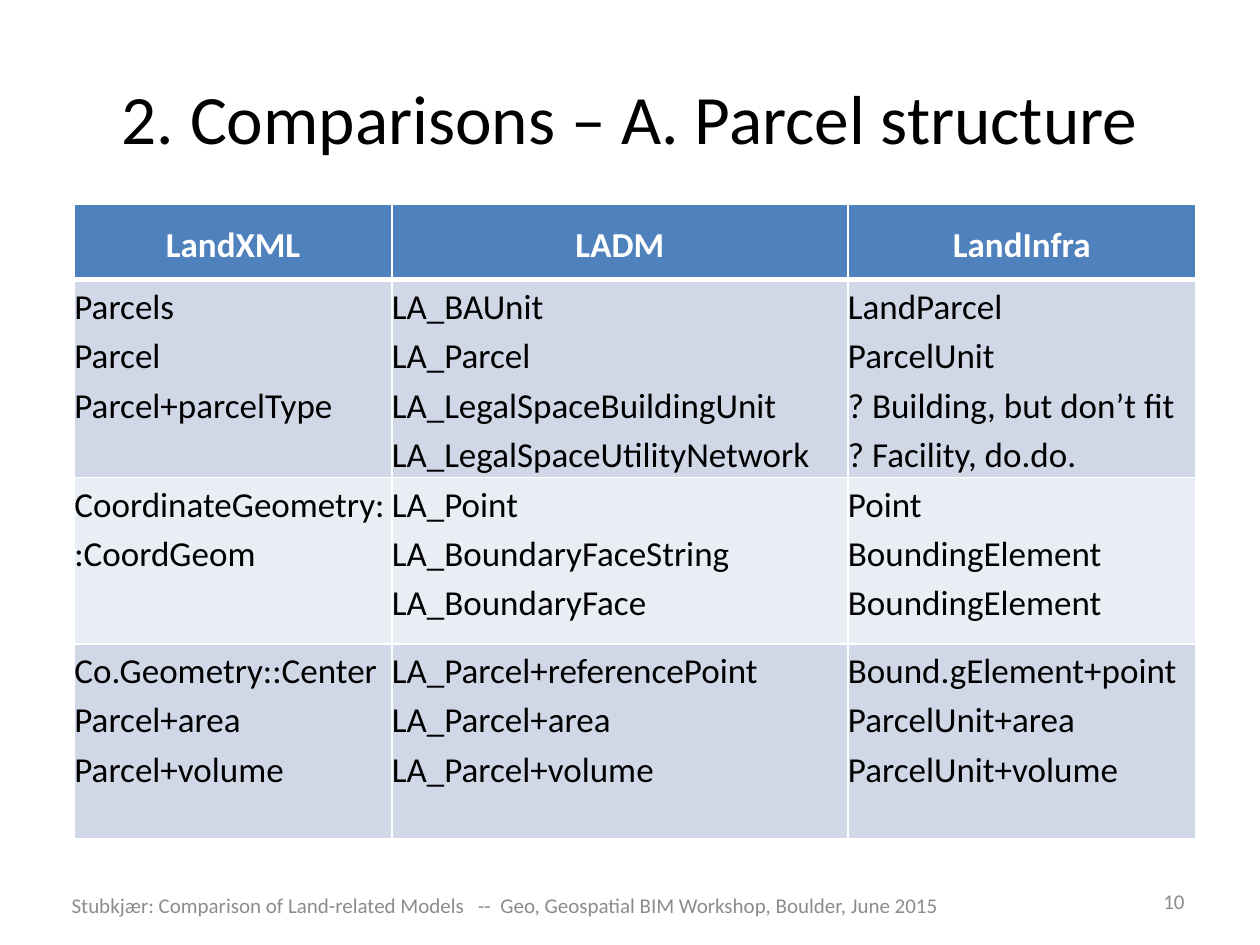
from lxml import etree
from pptx import Presentation
from pptx import util as u
from pptx.dml.color import RGBColor
from pptx.enum import text
from pptx.oxml.ns import qn

FONT = "Calibri"
WHITE, BLACK, GRAY, BLUE = "FFFFFF", "000000", "8C8C8C", "4F81BD"
BANDS = ["D0D8E8", "E9EDF4"]
WIDTHS = [2.52, 3.62, 2.76]
HEIGHTS = [0.6, 1.57, 1.32, 1.55]
LEFT, MID, RIGHT = text.PP_ALIGN.LEFT, text.PP_ALIGN.CENTER, text.PP_ALIGN.RIGHT

# \v is a line break, \n starts a new paragraph
ROWS = [
    ["LandXML", "LADM", "LandInfra"],
    ["Parcels\vParcel\vParcel+parcelType",
     "LA_BAUnit\vLA_Parcel\vLA_LegalSpaceBuildingUnit LA_LegalSpaceUtilityNetwork",
     "LandParcel\vParcelUnit\v? Building, but don’t fit\v? Facility, do.do."],
    ["CoordinateGeometry::CoordGeom",
     "LA_Point\vLA_BoundaryFaceString\vLA_BoundaryFace",
     "Point\vBoundingElement\vBoundingElement"],
    ["Co.Geometry::Center\vParcel+area\vParcel+volume",
     "LA_Parcel+referencePoint\nLA_Parcel+area\vLA_Parcel+volume",
     "Bound.gElement+point\nParcelUnit+area\vParcelUnit+volume"],
]


def color(code):
    return RGBColor.from_string(code)


def write(frame, words, size, tint, align, bold=False, space=1.0):
    frame.text = words
    style = {"size": u.Pt(size), "name": FONT, "bold": bold}
    for para in frame.paragraphs:
        para.alignment, para.line_spacing = align, space
        for run in para.runs:
            for key, value in style.items():
                setattr(run.font, key, value)
            run.font.color.rgb = color(tint)


def label(slide, box, words, size, tint, align):
    shape = slide.shapes.add_textbox(*map(u.Inches, box))
    frame = shape.text_frame
    frame.word_wrap = True
    frame.vertical_anchor = text.MSO_ANCHOR.MIDDLE
    write(frame, words, size, tint, align)


def edge(cell, side, width):
    props = cell._tc.get_or_add_tcPr()
    line = etree.SubElement(props, qn("a:ln" + side), w=str(u.Pt(width)))
    fill = etree.SubElement(line, qn("a:solidFill"))
    etree.SubElement(fill, qn("a:srgbClr"), val=WHITE)


def style_cell(cell, words, row):
    head = row == 0
    for side in ("left", "right", "top", "bottom"):
        setattr(cell, "margin_" + side, 0)
    cell.vertical_anchor = text.MSO_ANCHOR.MIDDLE if head else text.MSO_ANCHOR.TOP
    # A thick rule parts the header from the body
    for side, width in {"L": 1, "R": 1, "T": 3 if row == 1 else 1,
                        "B": 3 if head else 1}.items():
        edge(cell, side, width)
    cell.fill.solid()
    cell.fill.fore_color.rgb = color(BLUE if head else BANDS[(row - 1) % 2])
    write(cell.text_frame, words, 20, WHITE if head else BLACK,
          MID if head else LEFT, head, 1.15)


def grid(slide, left, top):
    box = map(u.Inches, (left, top, sum(WIDTHS), sum(HEIGHTS)))
    table = slide.shapes.add_table(len(ROWS), len(WIDTHS), *box).table
    for col, width in zip(table.columns, WIDTHS):
        col.width = u.Inches(width)
    for row, height in zip(table.rows, HEIGHTS):
        row.height = u.Inches(height)
    for r, line in enumerate(ROWS):
        for c, words in enumerate(line):
            style_cell(table.cell(r, c), words, r)


def main():
    deck = Presentation()
    deck.slide_width, deck.slide_height = u.Inches(10), u.Inches(7.5)
    slide = deck.slides.add_slide(deck.slide_layouts[6])

    # Title
    label(slide, (0.5, 0.3, 9, 1.25), "2. Comparisons – A. Parcel structure",
          39.6, BLACK, MID)
    # Footer and page number
    label(slide, (0.35, 6.98, 7.32, 0.4),
          "Stubkjær: Comparison of Land-related Models   --  "
          "Geo, Geospatial BIM Workshop, Boulder, June 2015", 12, GRAY, MID)
    label(slide, (7.17, 6.95, 2.33, 0.4), "10", 12, GRAY, RIGHT)
    # Comparison table
    grid(slide, 0.59, 1.62)

    deck.save("out.pptx")


if __name__ == "__main__":
    main()
